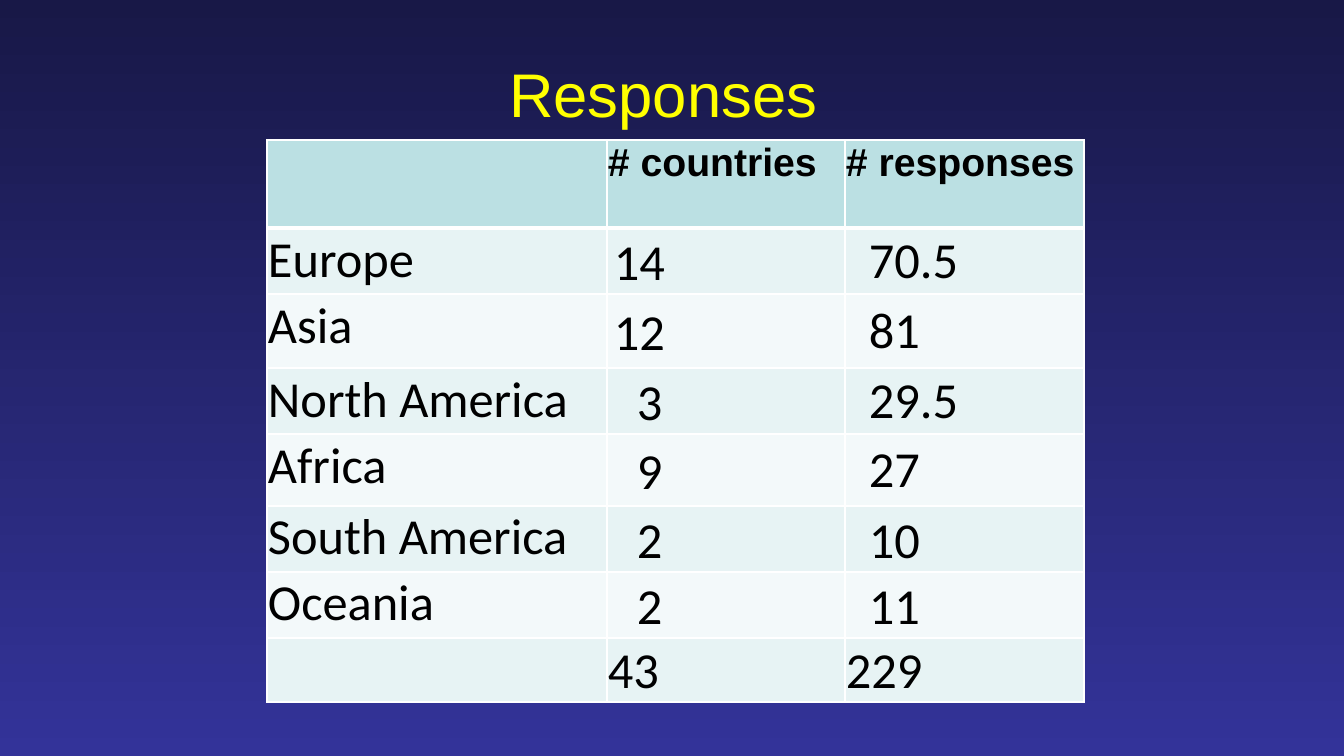
from lxml.etree import SubElement
from pptx import Presentation
from pptx.dml.color import RGBColor
from pptx.enum.text import MSO_ANCHOR, PP_ALIGN
from pptx.oxml.ns import qn
from pptx.util import Emu, Pt

EMU_PER_PX = 914400 / 100.8
HEADERS = ("", "# countries", "# responses")
REGIONS = (
    ("Europe", "14", "70.5"),
    ("Asia", "12", "81"),
    ("North America", "3", "29.5"),
    ("Africa", "9", "27"),
    ("South America", "2", "10"),
    ("Oceania", "2", "11"),
)
TOTALS = ("", "43", "229")
COLUMN_WIDTHS = (340, 238, 239)
ROW_HEIGHTS = (88, 66, 74, 66, 72, 66, 66, 64)
HEADER_FILL = "BBE0E3"
BAND_FILLS = ("F3F9FA", "E7F3F4")
FIRST_BOTTOM_ROW = 5
DIGIT_INDENT = 23


def px(length):
    return Emu(round(length * EMU_PER_PX))


def rgb(value):
    return RGBColor.from_string(value)


def write_text(frame, text, font="Calibri", size=36, color="000000",
               bold=False, align=PP_ALIGN.LEFT, line_spacing=None):
    paragraph = frame.paragraphs[0]
    paragraph.alignment = align
    paragraph.line_spacing = line_spacing
    run = paragraph.add_run()
    run.text = text
    run.font.name = font
    run.font.size = Pt(size)
    run.font.bold = bold
    run.font.color.rgb = rgb(color)


def set_background(slide, top, bottom):
    fill = slide.background.fill
    fill.gradient()
    fill.gradient_angle = 270
    for stop, color, position in zip(fill.gradient_stops, (top, bottom), (0, 1)):
        stop.color.rgb = rgb(color)
        stop.position = position


def add_title(slide, text):
    title = slide.shapes.title
    title.left, title.top, title.width, title.height = map(px, (67, 30, 1210, 126))
    title.text_frame.vertical_anchor = MSO_ANCHOR.MIDDLE
    write_text(title.text_frame, text, font="Arial", size=44, color="FFFF00",
               align=PP_ALIGN.CENTER)


def set_borders(cell, **widths):
    """Draw white borders; keys are L, R, T, B in that order, widths in points."""
    properties = cell._tc.get_or_add_tcPr()
    for side, width in widths.items():
        line = SubElement(properties, qn(f"a:ln{side}"), w=str(Pt(width)))
        fill = SubElement(line, qn("a:solidFill"))
        SubElement(fill, qn("a:srgbClr"), val="FFFFFF")


def style_cell(cell, fill, left, anchor, top_border=1, bottom_border=1):
    set_borders(cell, L=1, R=1, T=top_border, B=bottom_border)
    cell.fill.solid()
    cell.fill.fore_color.rgb = rgb(fill)
    cell.margin_left = px(left)
    cell.margin_right = cell.margin_top = px(1)
    cell.margin_bottom = 0
    cell.vertical_anchor = anchor


def fill_header(table):
    for column, heading in enumerate(HEADERS):
        cell = table.cell(0, column)
        style_cell(cell, HEADER_FILL, 1, MSO_ANCHOR.TOP, bottom_border=3)
        if heading:
            write_text(cell.text_frame, heading, font="Arial", size=28, bold=True)


def fill_region(table, row, values):
    number_anchor = MSO_ANCHOR.BOTTOM if row >= FIRST_BOTTOM_ROW else MSO_ANCHOR.MIDDLE
    indents = (1, 7 + DIGIT_INDENT * (len(values[1]) == 1), 1 + DIGIT_INDENT)
    anchors = (MSO_ANCHOR.TOP, MSO_ANCHOR.MIDDLE, number_anchor)
    spacings = (None, 1.07, None)
    for column, value in enumerate(values):
        cell = table.cell(row, column)
        style_cell(cell, BAND_FILLS[row % 2], indents[column], anchors[column],
                   top_border=3 if row == 1 else 1)
        if column == 1:
            cell.margin_top = 0
        write_text(cell.text_frame, value, line_spacing=spacings[column])


def fill_totals(table, row):
    for column, total in enumerate(TOTALS):
        cell = table.cell(row, column)
        style_cell(cell, BAND_FILLS[row % 2], 1, MSO_ANCHOR.BOTTOM)
        if total:
            write_text(cell.text_frame, total)


def add_response_table(slide):
    table = slide.shapes.add_table(
        len(ROW_HEIGHTS), len(COLUMN_WIDTHS), px(267), px(140),
        px(sum(COLUMN_WIDTHS)), px(sum(ROW_HEIGHTS))).table
    table.first_row = table.horz_banding = False
    for column, width in zip(table.columns, COLUMN_WIDTHS):
        column.width = px(width)
    for row, height in zip(table.rows, ROW_HEIGHTS):
        row.height = px(height)
    fill_header(table)
    for row, values in enumerate(REGIONS, start=1):
        fill_region(table, row, values)
    fill_totals(table, len(REGIONS) + 1)


def main():
    presentation = Presentation()
    presentation.slide_width = px(1344)
    presentation.slide_height = px(756)
    slide = presentation.slides.add_slide(presentation.slide_layouts[5])
    set_background(slide, "181847", "333399")
    add_title(slide, "Responses ")
    add_response_table(slide)
    presentation.save("out.pptx")


if __name__ == "__main__":
    main()
